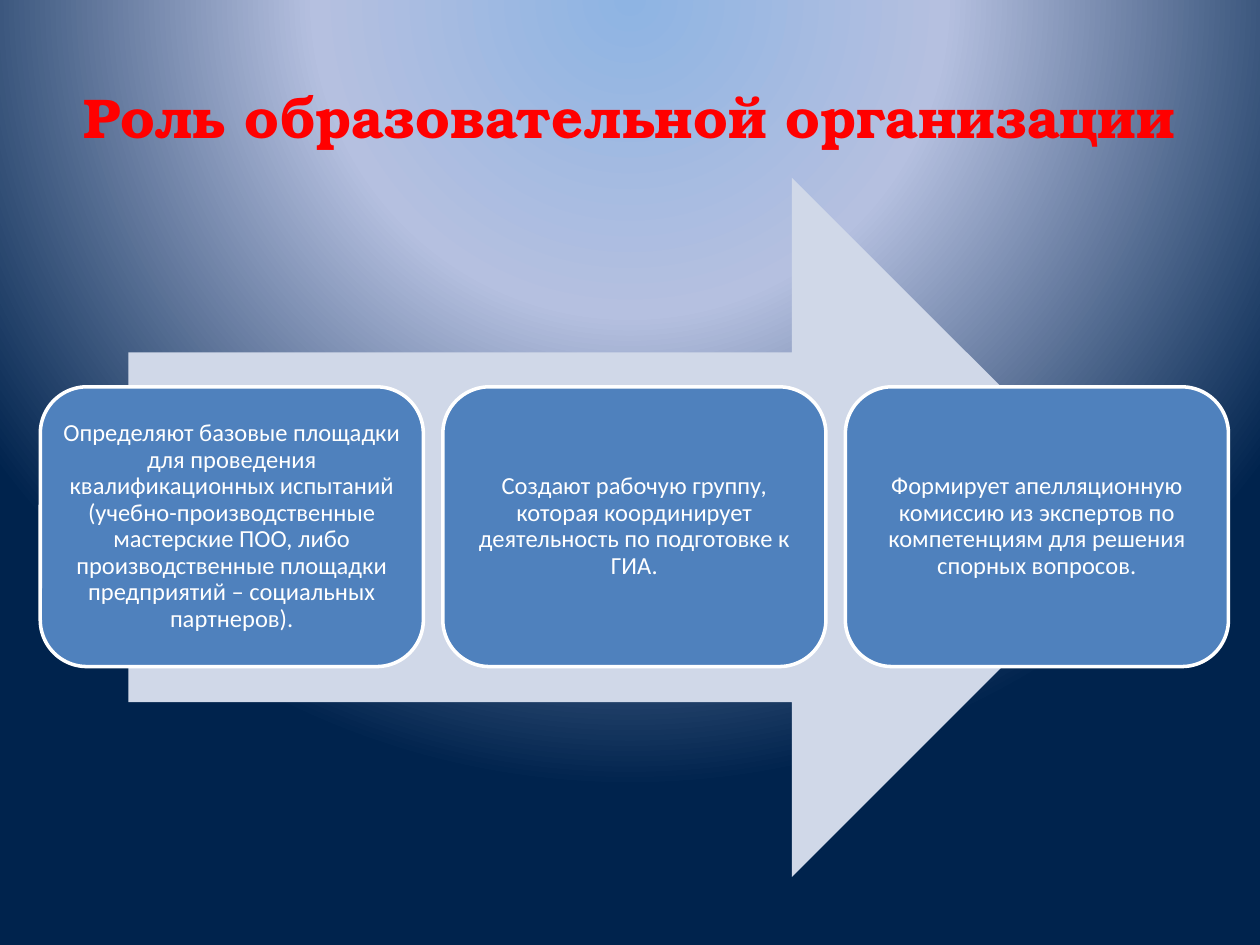
from pptx import Presentation
from pptx.dml.color import RGBColor
from pptx.enum.shapes import MSO_SHAPE
from pptx.enum.text import MSO_ANCHOR, PP_ALIGN
from pptx.oxml import parse_xml
from pptx.oxml.ns import nsdecls
from pptx.util import Inches, Pt

RIGHT_ARROW = MSO_SHAPE.RIGHT_ARROW
ROUNDED = MSO_SHAPE.ROUNDED_RECTANGLE
MIDDLE = MSO_ANCHOR.MIDDLE
CENTER = PP_ALIGN.CENTER

RED = RGBColor(0xFF, 0x00, 0x00)
WHITE = RGBColor(0xFF, 0xFF, 0xFF)
BLUE = RGBColor(0x4F, 0x81, 0xBD)
PALE_BLUE = RGBColor(0xD0, 0xD8, 0xE8)
SKY = RGBColor(0x8E, 0xB4, 0xE3)
LAVENDER = RGBColor(0xB5, 0xC0, 0xE0)
NAVY = RGBColor(0x00, 0x23, 0x4D)

BACKGROUND_STOPS = [(0, SKY), (40, LAVENDER), (100, NAVY)]
TITLE_FONT = {"name": "TeX Gyre Bonum", "size": Pt(32), "bold": True}
ROLE_FONT = {"name": "Calibri", "size": Pt(14), "bold": False}

TITLE = "Роль образовательной организации"
ROLES = [
    "Определяют базовые площадки для проведения квалификационных испытаний "
    "(учебно-производственные мастерские ПОО, либо производственные площадки "
    "предприятий – социальных партнеров).",
    "Создают рабочую группу, которая координирует деятельность по подготовке к ГИА.",
    "Формирует апелляционную комиссию из экспертов по компетенциям для решения "
    "спорных вопросов.",
]
ROLE_LEFT, ROLE_TOP, ROLE_WIDTH, ROLE_HEIGHT = 0.32, 3.07, 3.04, 2.22
ROLE_STEP = 3.195


def paint_background(slide):
    """Fill the slide with a circular gradient centred above its top edge."""
    slide.background.fill.solid()
    solid = slide.element.xpath("p:cSld/p:bg/p:bgPr/a:solidFill")[0]
    stops = "".join(
        f'<a:gs pos="{percent * 1000}"><a:srgbClr val="{color}"/></a:gs>'
        for percent, color in BACKGROUND_STOPS
    )
    gradient = parse_xml(
        f'<a:gradFill {nsdecls("a")} rotWithShape="1"><a:gsLst>{stops}</a:gsLst>'
        '<a:path path="circle">'
        '<a:fillToRect l="50000" t="-80000" r="50000" b="180000"/>'
        "</a:path></a:gradFill>"
    )
    solid.getparent().replace(solid, gradient)


def write_text(frame, text, font_format, color, line_spacing=1.0):
    frame.word_wrap = True
    frame.vertical_anchor = MIDDLE
    paragraph = frame.paragraphs[0]
    paragraph.alignment = CENTER
    paragraph.line_spacing = line_spacing
    run = paragraph.add_run()
    run.text = text
    for attribute, value in font_format.items():
        setattr(run.font, attribute, value)
    run.font.color.rgb = color


def add_title(slide):
    title = slide.shapes.add_textbox(Inches(0.5), Inches(0.3), Inches(9), Inches(1.25))
    write_text(title.text_frame, TITLE, TITLE_FONT, RED)


def add_filled_shape(slide, preset, left, top, width, height, color):
    shape = slide.shapes.add_shape(
        preset, Inches(left), Inches(top), Inches(width), Inches(height)
    )
    shape.shadow.inherit = False
    shape.fill.solid()
    shape.fill.fore_color.rgb = color
    return shape


def add_arrow(slide):
    arrow = add_filled_shape(slide, RIGHT_ARROW, 1.02, 1.41, 8.04, 5.55, PALE_BLUE)
    arrow.line.fill.background()


def add_role(slide, left, text):
    role = add_filled_shape(
        slide, ROUNDED, left, ROLE_TOP, ROLE_WIDTH, ROLE_HEIGHT, BLUE
    )
    role.line.color.rgb = WHITE
    role.line.width = Pt(2)
    for side in ("left", "top", "right", "bottom"):
        setattr(role.text_frame, f"margin_{side}", Inches(0.06))
    write_text(role.text_frame, text, ROLE_FONT, WHITE, line_spacing=0.9)


def main():
    prs = Presentation()
    prs.slide_width, prs.slide_height = Inches(10), Inches(7.5)
    slide = prs.slides.add_slide(prs.slide_layouts[6])

    paint_background(slide)
    add_title(slide)

    # Arrow with the three roles across it
    add_arrow(slide)
    for index, text in enumerate(ROLES):
        add_role(slide, ROLE_LEFT + index * ROLE_STEP, text)

    prs.save("out.pptx")


if __name__ == "__main__":
    main()
